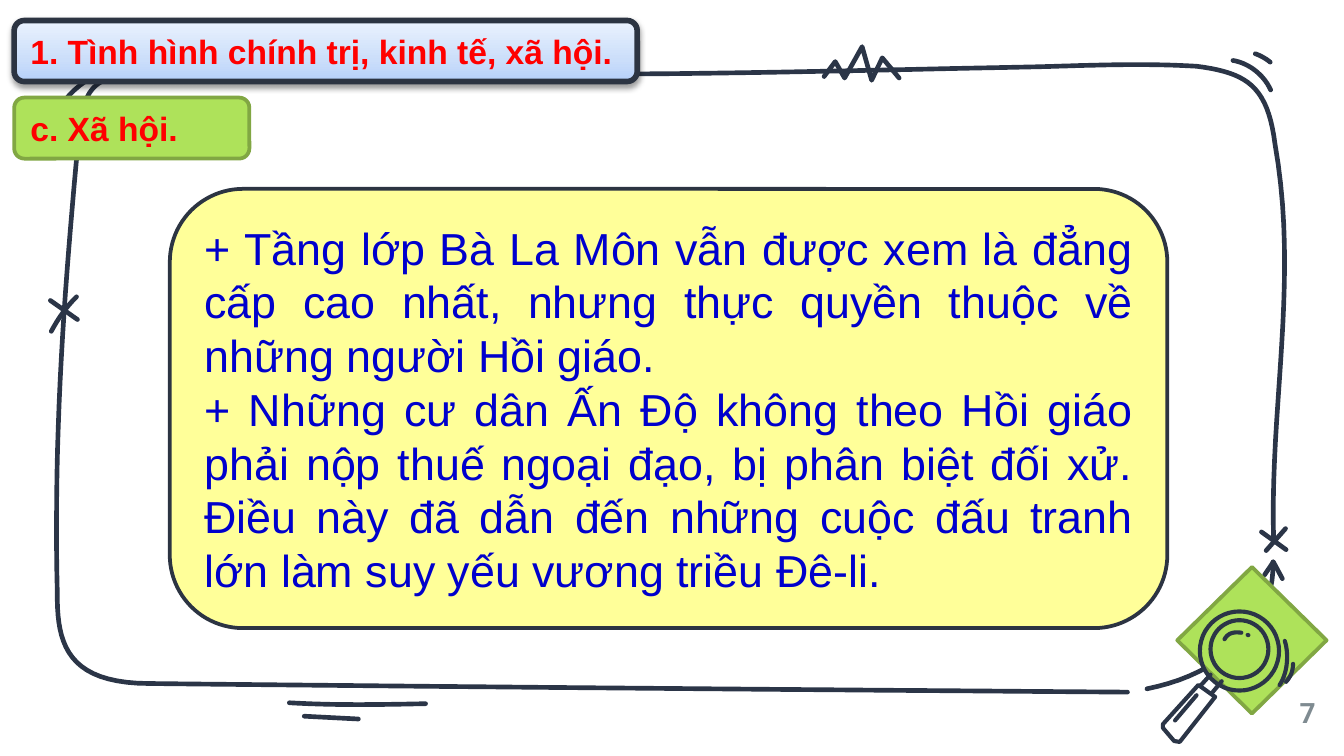
from math import cos, pi, sin

from lxml import etree
from pptx import Presentation
from pptx.dml.color import RGBColor
from pptx.enum.shapes import MSO_SHAPE
from pptx.enum.text import MSO_ANCHOR, PP_ALIGN
from pptx.oxml import parse_xml
from pptx.oxml.ns import nsdecls, qn
from pptx.util import Pt

INK = RGBColor(0x2B, 0x35, 0x47)
BORDER = RGBColor(0x2C, 0x34, 0x42)
LIME = RGBColor(0xAE, 0xE2, 0x5A)
OLIVE = RGBColor(0x81, 0xA7, 0x43)
CREAM = RGBColor(0xFF, 0xFF, 0x99)
RED = RGBColor(0xFF, 0x00, 0x00)
BLUE = RGBColor(0x00, 0x00, 0xCC)
GREY = RGBColor(0x7F, 0x8B, 0x91)

HEADING = "1. Tình hình chính trị, kinh tế, xã hội."
SUBHEADING = "c. Xã hội."
BODY = [
    "+ Tầng lớp Bà La Môn vẫn được xem là đẳng cấp cao nhất, nhưng thực quyền "
    "thuộc về những người Hồi giáo.",
    "+ Những cư dân Ấn Độ không theo Hồi giáo phải nộp thuế ngoại đạo, bị phân "
    "biệt đối xử. Điều này đã dẫn đến những cuộc đấu tranh lớn làm suy yếu "
    "vương triều Đê-li.",
]
PAGE_NUMBER = "7"
HEADING_GRADIENT = [(0, "B6D0FA"), (35, "CBDEFA"), (100, "EAF2FE")]

# Each doodle holds curves (a start point, then two handles and an end point
# per segment), straight lines, and rings (centre x, centre y, radius).
BORDER_DOODLES = [
    # border of the page
    {"curves": [[
        (604, 370.8), (428, 369.5), (251, 368), (80, 366.2),
        (36, 366), (30.5, 345), (30.7, 318), (28.5, 230), (35, 150), (41.5, 80),
        (43.5, 62), (44, 48), (56, 43), (100, 33), (160, 36), (205, 38),
        (322, 42), (440, 38), (556, 35.8), (584, 35), (612, 33.8), (641, 35.5),
        (668, 39), (679, 46), (683, 77), (696, 150), (680, 218), (682.3, 290)]]},
    # underlines
    {"curves": [[(155, 376.5), (180, 378), (205, 377.5), (228, 377)]]},
    {"lines": [[(163, 383.7), (192, 385.2)]]},
    # zigzag
    {"lines": [[(441.5, 41), (447.5, 33), (452.5, 41.8), (461.9, 25), (467, 43),
                (472.7, 31), (481.7, 41.8)]]},
    # top right arcs
    {"curves": [[(660.5, 32.4), (670, 34), (677.5, 41), (680.7, 48.2)]]},
    {"curves": [[(672.5, 28.8), (676, 30), (679, 32), (680.5, 33.3)]]},
    # crosses
    {"curves": [[(41, 159), (35, 165), (31, 171), (27.5, 177.5)]],
     "lines": [[(27, 161), (41.5, 171.2)]]},
    {"lines": [[(675.8, 285), (689, 294.5)], [(688.7, 283.2), (678.3, 295)]]},
    # corner arrows
    {"curves": [[(614.5, 369), (655, 361), (683, 335), (682, 301)]],
     "lines": [[(677.5, 308), (682.2, 301), (687, 310)]]},
    {"curves": [[(25, 84), (25, 55), (46, 35), (80, 33)]],
     "lines": [[(76, 25), (80, 33), (78, 36)]]},
]
MAGNIFIER = {
    "curves": [
        [(656, 342.5), (658, 339), (661, 338.5), (665, 339)],
        [(688.3, 343.4), (691, 352), (689, 362), (685.5, 367)],
        [(692.7, 355.7), (692.7, 360), (691, 363), (689, 365.3)],
    ],
    "lines": [
        [(668.4, 340.2), (668.8, 340.3)],
        [(643.5, 367), (648.5, 361.5)],
        [(649.5, 371), (654.5, 365)],
        [(642, 367), (651, 373.4), (632, 397.5), (629, 397), (623, 390),
         (623, 388), (642, 367)],
        [(641, 372.5), (629.5, 386)],
    ],
    "rings": [(664, 348.8, 21.2), (664, 347.8, 15.5)],
}

deck = Presentation()
deck.slide_width, deck.slide_height = Pt(720), Pt(405)
slide = deck.slides.add_slide(deck.slide_layouts[6])


def flatten(curve, steps=20):
    """Turn a chain of cubic curves into a list of close points."""
    points = [curve[0]]
    for first in range(0, len(curve) - 1, 3):
        a, b, c, d = curve[first:first + 4]
        for step in range(1, steps + 1):
            t = step / steps
            u = 1 - t
            points.append(tuple(
                u**3 * a[i] + 3 * u * u * t * b[i] + 3 * u * t * t * c[i] + t**3 * d[i]
                for i in (0, 1)))
    return points


def ring_points(x, y, radius, steps=48):
    angles = [2 * pi * step / steps for step in range(steps + 1)]
    return [(x + radius * cos(angle), y + radius * sin(angle)) for angle in angles]


def draw_doodle(doodle, width):
    strokes = [
        *map(flatten, doodle.get("curves", [])),
        *doodle.get("lines", []),
        *(ring_points(*ring) for ring in doodle.get("rings", [])),
    ]
    builder = None
    for stroke in strokes:
        start, *rest = [(Pt(x), Pt(y)) for x, y in stroke]
        if builder is None:
            builder = slide.shapes.build_freeform(*start)
        else:
            builder.move_to(*start)
        builder.add_line_segments(rest, close=False)
    shape = builder.convert_to_shape()
    style(shape, None, INK, width)
    outline = shape.line._get_or_add_ln()
    outline.set("cap", "rnd")
    etree.SubElement(outline, qn("a:round"))


def style(shape, fill, line, width):
    shape.shadow.inherit = False
    if fill is None:
        shape.fill.background()
    else:
        shape.fill.solid()
        shape.fill.fore_color.rgb = fill
    shape.line.color.rgb = line
    shape.line.width = Pt(width)


def add_preset(kind, box, fill, line, width):
    shape = slide.shapes.add_shape(kind, *map(Pt, box))
    style(shape, fill, line, width)
    return shape


def write(shape, paragraphs, size, color, bold=False, align=PP_ALIGN.JUSTIFY,
          font="Arial"):
    frame = shape.text_frame
    frame.word_wrap = True
    frame.vertical_anchor = MSO_ANCHOR.MIDDLE
    frame.text = "\n".join(paragraphs)
    for paragraph in frame.paragraphs:
        paragraph.alignment = align
        for run in paragraph.runs:
            run.font.name, run.font.size, run.font.bold = font, Pt(size), bold
            run.font.color.rgb = color


def add_gradient_and_shadow(shape, stops):
    properties = shape._element.spPr
    stop_xml = "".join(
        f'<a:gs pos="{percent * 1000}"><a:srgbClr val="{color}"/></a:gs>'
        for percent, color in stops)
    gradient = parse_xml(
        f'<a:gradFill {nsdecls("a")} rotWithShape="1"><a:gsLst>{stop_xml}</a:gsLst>'
        '<a:lin ang="16200000" scaled="0"/></a:gradFill>')
    properties.replace(properties.find(qn("a:solidFill")), gradient)
    properties.find(qn("a:effectLst")).append(parse_xml(
        f'<a:outerShdw {nsdecls("a")} blurRad="{Pt(3.1)}" dist="{Pt(1.6)}" '
        'dir="5400000" rotWithShape="0"><a:srgbClr val="000000">'
        '<a:alpha val="38000"/></a:srgbClr></a:outerShdw>'))


for doodle in BORDER_DOODLES:
    draw_doodle(doodle, 2.5)

number = slide.shapes.add_textbox(Pt(661.7), Pt(369.8), Pt(43.2), Pt(23.8))
write(number, [PAGE_NUMBER], 15, GREY, True, PP_ALIGN.RIGHT, "Roboto")
number.text_frame.margin_left = number.text_frame.margin_right = 0
number.text_frame.margin_top = number.text_frame.margin_bottom = 0

add_preset(MSO_SHAPE.DIAMOND, (630.7, 303.8, 80, 78.5), LIME, OLIVE, 2)
draw_doodle(MAGNIFIER, 2.2)

ROUNDED = MSO_SHAPE.ROUNDED_RECTANGLE
heading = add_preset(ROUNDED, (7.6, 11, 333.8, 32.7), CREAM, BORDER, 3)
add_gradient_and_shadow(heading, HEADING_GRADIENT)
write(heading, [HEADING], 18, RED, True)

subheading = add_preset(ROUNDED, (7.6, 52.3, 126, 32.7), LIME, OLIVE, 2)
write(subheading, [SUBHEADING], 18, RED, True)

body = add_preset(ROUNDED, (91, 101.2, 534.4, 235.3), CREAM, BORDER, 2)
write(body, BODY, 24, BLUE)

deck.save("out.pptx")
